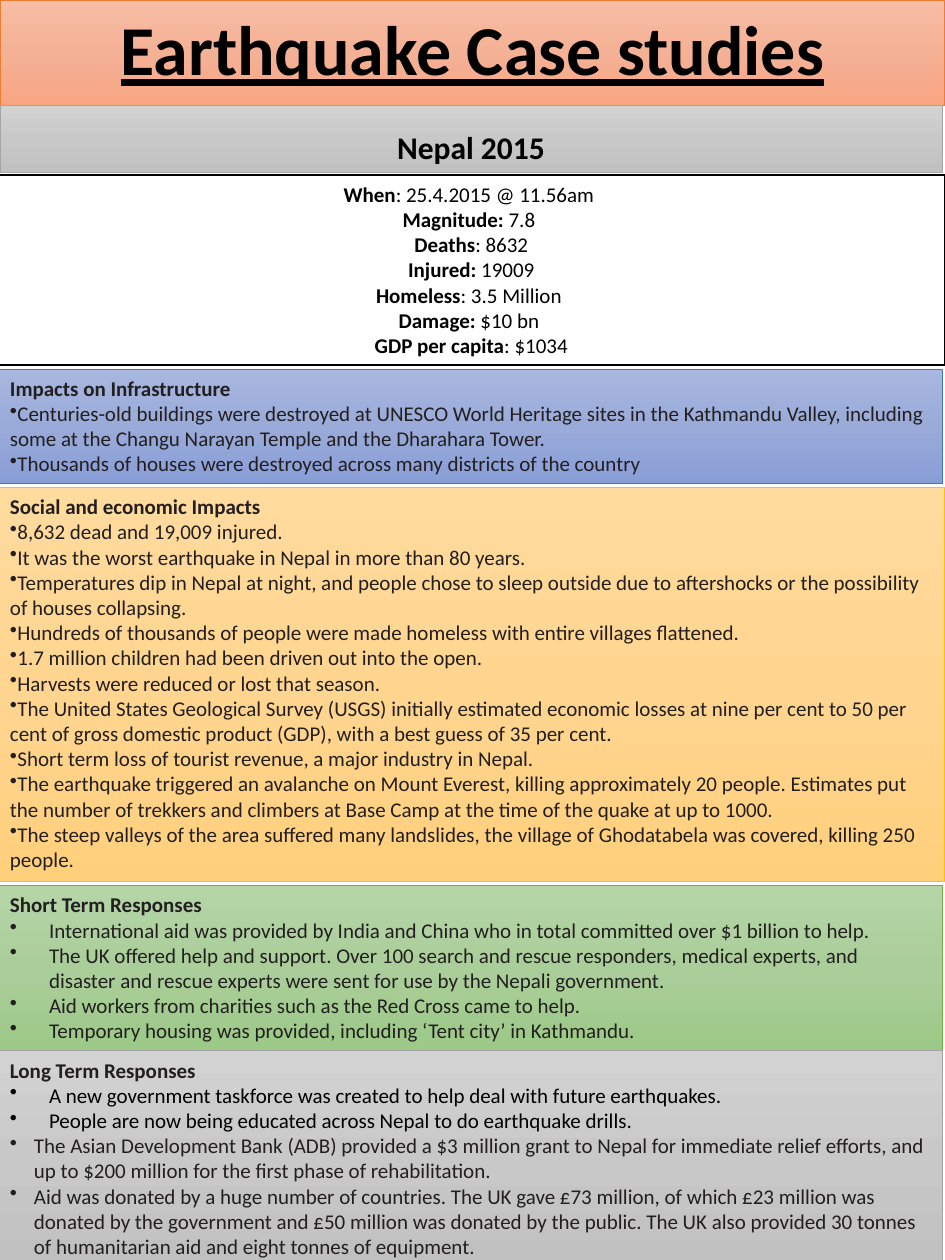
from copy import deepcopy

from lxml import etree
from pptx import Presentation, util as u
from pptx.dml.color import RGBColor
from pptx.enum import shapes, text
from pptx.oxml.ns import qn

WIDE, HIGH = u.Inches(7.5), u.Inches(10)
BLACK = RGBColor(0, 0, 0)
WHITE = RGBColor(255, 255, 255)
INK = RGBColor(0x23, 0x1F, 0x20)


def tone(line, *stops):
    """Return a line colour and its gradient stops."""
    return RGBColor.from_string(line), [RGBColor.from_string(s) for s in stops]


CORAL = tone("ED7D31", "F7BDA5", "F5B196", "F8A582")
GREY = tone("A5A5A5", "D2D2D2", "C8C8C8", "C0C0C0")
BLUE = tone("4472C4", "A8B7DF", "9AABD9", "889ED7")
GOLD = tone("FFC000", "FFDB9E", "FFD590", "FFD07C")
GREEN = tone("70AD47", "B5D5A7", "AACE9A", "9CC987")
PLAIN = (BLACK, [WHITE])

FACTS = [
    ("When", ": 25.4.2015 @ 11.56am "),
    ("Magnitude:", " 7.8 "),
    ("Deaths", ": 8632"),
    ("Injured:", " 19009"),
    ("Homeless", ": 3.5 Million "),
    ("Damage:", " $10 bn "),
    ("GDP per capita", ": $1034"),
]
BUILT = [
    "Centuries-old buildings were destroyed at UNESCO World Heritage sites in the Kathmandu Valley, including some at the Changu Narayan Temple and the Dharahara Tower.",
    "Thousands of houses were destroyed across many districts of the country",
]
SOCIAL = [
    "8,632 dead and 19,009 injured.",
    "It was the worst earthquake in Nepal in more than 80 years.",
    "Temperatures dip in Nepal at night, and people chose to sleep outside due to aftershocks or the possibility of houses collapsing.",
    "Hundreds of thousands of people were made homeless with entire villages flattened.",
    "1.7 million children had been driven out into the open.",
    "Harvests were reduced or lost that season.",
    "The United States Geological Survey (USGS) initially estimated economic losses at nine per cent to 50 per cent of gross domestic product (GDP), with a best guess of 35 per cent.",
    "Short term loss of tourist revenue, a major industry in Nepal.",
    "The earthquake triggered an avalanche on Mount Everest, killing approximately 20 people. Estimates put the number of trekkers and climbers at Base Camp at the time of the quake at up to 1000.",
    "The steep valleys of the area suffered many landslides, the village of Ghodatabela was covered, killing 250 people.",
]
SHORT = [
    "International aid was provided by India and China who in total committed over $1 billion to help.",
    "The UK offered help and support. Over 100 search and rescue responders, medical experts, and disaster and rescue experts were sent for use by the Nepali government.",
    "Aid workers from charities such as the Red Cross came to help.",
    "Temporary housing was provided, including ‘Tent city’ in Kathmandu.",
]
DRILLS = [
    "A new government taskforce was created to help deal with future earthquakes.",
    "People are now being educated across Nepal to do earthquake drills.",
]
GRANTS = [
    "The Asian Development Bank (ADB) provided a $3 million grant to Nepal for immediate relief efforts, and up to $200 million for the first phase of rehabilitation.",
    "Aid was donated by a huge number of countries. The UK gave £73 million, of which £23 million was donated by the government and £50 million was donated by the public. The UK also provided 30 tonnes of humanitarian aid and eight tonnes of equipment.",
]


def panel(slide, box, hue, anchor=text.MSO_ANCHOR.TOP, edge=0.5):
    """Draw a filled box given in percent of the slide; return its text frame."""
    left, top, wide, high = box
    shape = slide.shapes.add_shape(
        shapes.MSO_SHAPE.RECTANGLE,
        int(WIDE * left / 100), int(HIGH * top / 100),
        int(WIDE * wide / 100), int(HIGH * high / 100))
    shape.shadow.inherit = False
    line, stops = hue
    shape.line.color.rgb = line
    shape.line.width = u.Pt(edge)
    fill = shape.fill
    if len(stops) == 1:
        fill.solid()
        fill.fore_color.rgb = stops[0]
    else:
        fill.gradient()
        fill.gradient_angle = 270
        first = next(shape._element.spPr.iter(qn("a:gs")))
        first.addnext(deepcopy(first))
        for i, (stop, rgb) in enumerate(zip(fill.gradient_stops, stops)):
            stop.position = i / (len(stops) - 1)
            stop.color.rgb = rgb
    frame = shape.text_frame
    frame.word_wrap = True
    frame.vertical_anchor = anchor
    return frame


def write(frame, runs, size=12, rgb=INK, bold=None, align=text.PP_ALIGN.LEFT):
    """Fill the first empty paragraph, or a new one, with runs."""
    para = frame.paragraphs[-1]
    if para.runs:
        para = frame.add_paragraph()
    para.alignment = align
    font = para.font
    font.name, font.size, font.bold = "Calibri", u.Pt(size), bold
    font.color.rgb = rgb
    for words in runs:
        para.add_run().text = words
    return para


def banner(slide, box, hue, words, size, anchor):
    """Draw a heading band."""
    frame = panel(slide, box, hue, anchor)
    para = write(frame, [words], size, BLACK, True, text.PP_ALIGN.CENTER)
    para.line_spacing = 0.9
    return para


def facts(slide, box, rows):
    """Draw the key figures, one centred line each."""
    frame = panel(slide, box, PLAIN, edge=1)
    for row in rows:
        para = write(frame, row, rgb=BLACK, align=text.PP_ALIGN.CENTER)
        para.runs[0].font.bold = True


def notes(slide, box, hue, head, *groups):
    """Draw a headed box of bullet groups, each (lines, indent, colour)."""
    frame = panel(slide, box, hue)
    write(frame, [head], bold=True)
    for lines, indent, rgb in groups:
        for words in lines:
            props = write(frame, [words], rgb=rgb)._p.get_or_add_pPr()
            props.set("marL", str(u.Inches(indent)))
            props.set("indent", str(-u.Inches(indent)))
            mark = etree.Element(qn("a:buChar"), char="•")
            props.find(qn("a:defRPr")).addprevious(mark)


def main():
    """Build and save the slide."""
    deck = Presentation()
    deck.slide_width, deck.slide_height = WIDE, HIGH
    slide = deck.slides.add_slide(deck.slide_layouts[6])
    title = banner(slide, (0, 0, 100, 8.4), CORAL,
                   "Earthquake Case studies", 40, text.MSO_ANCHOR.MIDDLE)
    title.font.underline = True
    place = banner(slide, (0, 8.4, 99.7, 5.3), GREY,
                   "Nepal 2015", 18, text.MSO_ANCHOR.BOTTOM)
    place.space_before = u.Pt(7.5)
    left, wide, slim = -0.25, 100.25, 100
    facts(slide, (left, 13.9, wide, 15.1), FACTS)
    notes(slide, (left, 29.3, slim, 9.1), BLUE,
          "Impacts on Infrastructure", (BUILT, 0, INK))
    notes(slide, (left, 38.7, wide, 31.3), GOLD,
          "Social and economic Impacts", (SOCIAL, 0, INK))
    notes(slide, (left, 70.3, slim, 13.1), GREEN,
          "Short Term Responses", (SHORT, 0.31, INK))
    notes(slide, (left, 83.4, slim, 17.2), GREY, "Long Term Responses",
          (DRILLS, 0.31, BLACK), (GRANTS, 0.19, INK))
    deck.save("out.pptx")


if __name__ == "__main__":
    main()
